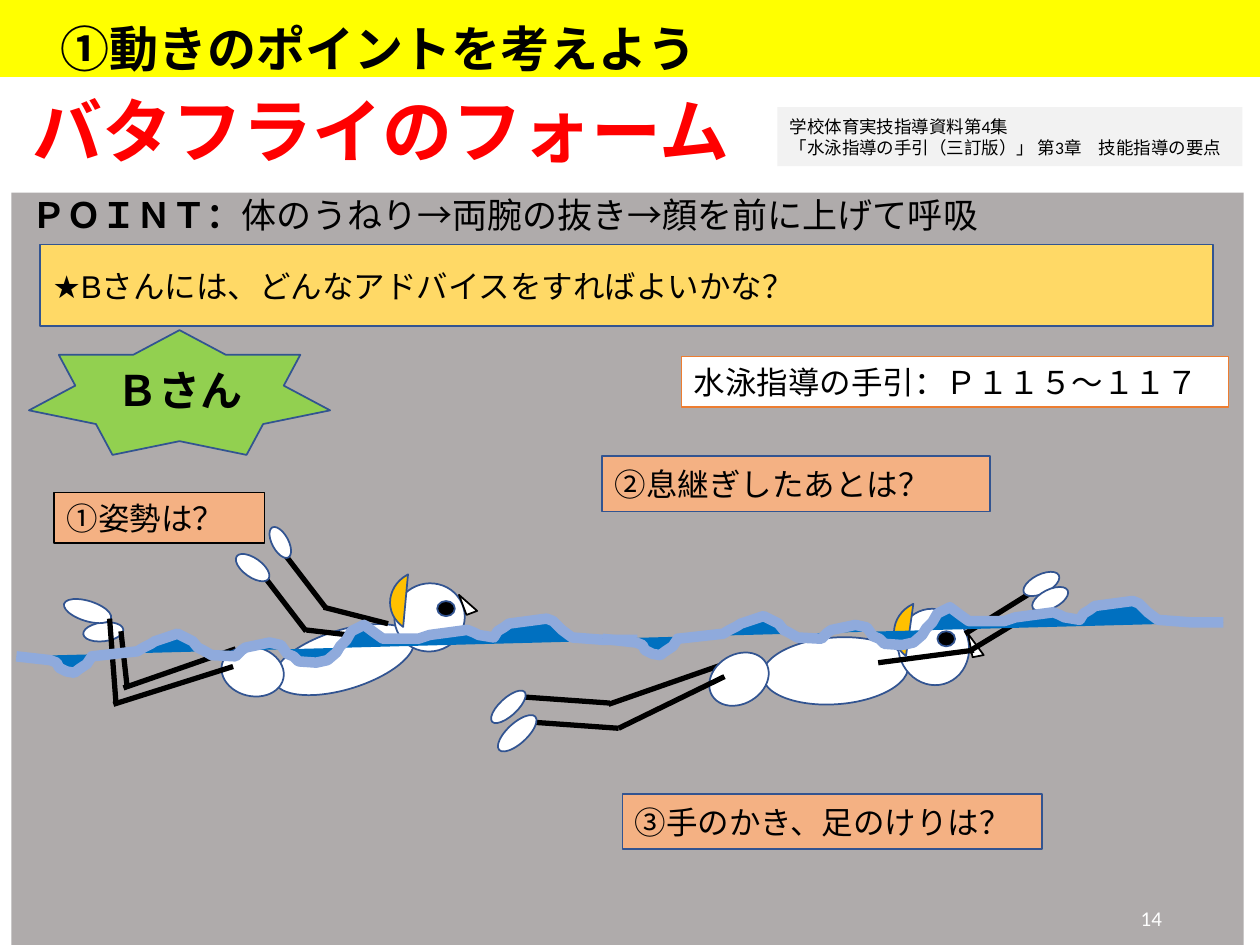
from lxml.etree import SubElement
from pptx import Presentation
from pptx.dml.color import RGBColor
from pptx.enum.shapes import MSO_CONNECTOR as Link, MSO_SHAPE as Kind
from pptx.enum.text import MSO_ANCHOR as Anchor, MSO_AUTO_SIZE as Auto, PP_ALIGN as Align
from pptx.oxml.ns import qn
from pptx.util import Inches, Pt

COLORS = {
    "black": "000000", "white": "FFFFFF", "gray": "AFABAB", "pale": "F2F2F2",
    "yellow": "FFFF00", "gold": "FFD966", "cap": "FFC000", "peach": "F4B183",
    "green": "92D050", "red": "FF0000", "navy": "325491", "orange": "ED7D31",
    "water": "0070C0", "foam": "8FAADC",
}

TITLE = "①動きのポイントを考えよう"
POINT = ("ＰＯＩＮＴ：", "体のうねり→両腕の抜き→顔を前に上げて呼吸")

PANELS = [((9, 153, 978, 597), "gray"), ((-2, 0, 1002, 61), "yellow")]

# box, text, size, font, fill, edge, color, bold, align
BOXES = [
    ((16, 67, 590, 71), "バタフライのフォーム", 40, "Arial", "white", None, "red", True, "LEFT"),
    ((617, 85, 369, 47), "学校体育実技指導資料第4集\n「水泳指導の手引（三訂版）」 第3章　技能指導の要点",
     10, "Calibri", "pale", None, "black", False, "LEFT"),
    ((32, 194, 931, 65), "★Bさんには、どんなアドバイスをすればよいかな？",
     18, "Arial", "gold", "navy", "black", False, "LEFT"),
    ((541, 283, 434, 40), "水泳指導の手引：Ｐ１１５～１１７",
     18, "Calibri", "white", "orange", "black", False, "LEFT"),
    ((43, 391, 167, 40), "①姿勢は？", 18, "Arial", "peach", "black", "black", False, "LEFT"),
    ((478, 362, 308, 44), "②息継ぎしたあとは？", 18, "Arial", "peach", "navy", "black", False, "LEFT"),
    ((494, 630, 333, 44), "③手のかき、足のけりは？",
     18, "Calibri", "peach", "navy", "black", False, "LEFT"),
]
STAR = ((23, 262, 239, 99), "Ｂさん", 24, "Calibri", "green", "navy", "black", True, "CENTER")
NUMBER = ((707, 709, 225, 40), "14", 12, "Calibri", None, None, "white", False, "RIGHT")

RISING = [
    ("limb", (187, 515, 98, 546)),
    ("skin", (215, 500, 116, 47), 342.9),
    ("skin", (313, 463, 56, 54), 344.2),
    ("nose", (363, 474, 17, 9), 249.4),
    ("eye", (347, 477, 14, 12), 0),
    ("cap", (312, 450, 50, 55), 81),
    ("skin", (66, 494, 32, 15), 353.3),
    ("skin", (50, 477, 39, 16), 17.3),
    ("skin", (181, 508, 39, 50), 103.3),
    ("limb", (92, 557, 87, 491)),
    ("limb", (185, 529, 90, 559)),
    ("limb", (312, 508, 243, 500)),
    ("limb", (243, 501, 210, 458)),
    ("limb", (101, 546, 96, 501)),
    ("skin", (185, 443, 31, 15), 35.5),
    ("limb", (308, 495, 257, 482)),
    ("limb", (259, 483, 226, 440)),
    ("skin", (209, 424, 27, 13), 241.9),
]
DIVING = [
    ("skin", (605, 506, 116, 53), 355.9),
    ("skin", (713, 483, 56, 61), 344.2),
    ("nose", (765, 507, 19, 9), 258.9),
    ("limb", (773, 516, 697, 526)),
    ("limb", (825, 483, 769, 517)),
    ("eye", (744, 501, 14, 12), 0),
    ("cap", (712, 474, 50, 55), 83.8),
    ("limb", (491, 578, 420, 573)),
    ("skin", (391, 574, 39, 16), 317.4),
    ("limb", (572, 528, 483, 559)),
    ("limb", (484, 558, 413, 553)),
    ("skin", (386, 554, 35, 14), 317.4),
    ("skin", (567, 514, 39, 50), 58.4),
    ("limb", (575, 537, 491, 578)),
    ("limb", (819, 470, 766, 503)),
    ("skin", (811, 456, 31, 15), 333.5),
    ("skin", (818, 468, 31, 15), 333.5),
]
PARTS = {
    "skin": (Kind.OVAL, "white", "navy"),
    "eye": (Kind.OVAL, "black", "navy"),
    "nose": (Kind.RIGHT_TRIANGLE, "white", "black"),
    "cap": (Kind.CHORD, "cap", "navy"),
}
ARC = (49.25, 157.59)
WAVE = [
    (506, 508), (480, 508), (454, 506), (446, 500), (439, 493), (434, 491), (404, 495),
    (400, 498), (395, 501), (392, 506), (380, 504), (376, 502), (371, 500), (341, 504),
    (332, 507), (304, 507), (297, 502), (289, 496), (279, 501), (275, 508), (270, 513),
    (267, 518), (260, 524), (251, 526), (237, 525), (233, 521), (228, 519), (223, 512),
    (214, 510), (195, 514), (192, 516), (187, 521), (168, 520), (161, 516), (157, 514),
    (153, 509), (145, 505), (141, 503), (123, 509), (120, 511), (114, 514), (109, 517),
    (73, 521), (69, 527), (63, 531), (59, 534), (53, 533), (47, 530), (45, 526), (40, 524),
    (22, 522), (13, 521),
]
SWIMS = [(RISING, (0, 0)), (DIVING, (465, -14))]

deck = Presentation()
deck.slide_width, deck.slide_height = Inches(10), Inches(7.5)
UNIT = deck.slide_width // 1000
slide = deck.slides.add_slide(deck.slide_layouts[5])
shapes = slide.shapes


def tint(name):
    return RGBColor.from_string(COLORS[name])


def grid(box):
    return [n * UNIT for n in box]


def paint(shape, fill, edge=None, width=1):
    shape.shadow.inherit = False
    if fill:
        shape.fill.solid()
        shape.fill.fore_color.rgb = tint(fill)
    else:
        shape.fill.background()
    if edge:
        shape.line.color.rgb = tint(edge)
        shape.line.width = Pt(width)
    else:
        shape.line.fill.background()


def style(frame, size, font, color, bold, align="LEFT"):
    frame.word_wrap = True
    frame.auto_size = Auto.NONE
    frame.vertical_anchor = Anchor.MIDDLE
    for para in frame.paragraphs:
        para.alignment = getattr(Align, align)
        for run in para.runs:
            run.font.size, run.font.name, run.font.bold = Pt(size), font, bold
            run.font.color.rgb = tint(color)


def label(kind, box, text, size, font, fill, edge, color, bold, align):
    shape = shapes.add_shape(kind, *grid(box))
    paint(shape, fill, edge)
    shape.text_frame.text = text
    style(shape.text_frame, size, font, color, bold, align)


def limb(ends):
    line = shapes.add_connector(Link.STRAIGHT, *grid(ends))
    line.line.color.rgb = tint("black")
    line.line.width = Pt(3)
    SubElement(line._element.spPr, qn("a:effectLst"))


def part(name, box, turn):
    kind, fill, edge = PARTS[name]
    shape = shapes.add_shape(kind, *grid(box))
    paint(shape, fill, edge)
    shape.rotation = turn
    if name == "nose":
        shape._element.spPr.xfrm.set("flipV", "1")
    if name == "cap":
        for i, angle in enumerate(ARC):
            shape.adjustments[i] = angle * 0.6


def wave(dx, dy):
    spots = [(x + dx, y + dy) for x, y in WAVE]
    pen = shapes.build_freeform(*spots[0], scale=UNIT)
    pen.add_line_segments(spots[1:], close=False)
    paint(pen.convert_to_shape(), "water", "foam", 6)


for box, fill in PANELS:
    paint(shapes.add_shape(Kind.RECTANGLE, *grid(box)), fill)

title = shapes.title
title.left, title.top, title.width, title.height = grid((38, 6, 893, 64))
title.text_frame.text = TITLE
style(title.text_frame, 28, "Calibri", "black", True)
shapes._spTree.append(title._element)

for box in BOXES:
    label(Kind.RECTANGLE, *box)
label(Kind.STAR_7_POINT, *STAR)
label(Kind.RECTANGLE, *NUMBER)

note = shapes.add_textbox(*grid((23, 149, 935, 64))).text_frame
for text in POINT:
    note.paragraphs[0].add_run().text = text
style(note, 20, "Arial", "black", True)
note.paragraphs[0].runs[1].font.bold = False
note.vertical_anchor = Anchor.TOP
note.margin_left = note.margin_right = Inches(0.02)

for body, shift in SWIMS:
    for name, box, *turn in body:
        if name == "limb":
            limb(box)
        else:
            part(name, box, *turn)
    wave(*shift)

deck.save("out.pptx")
